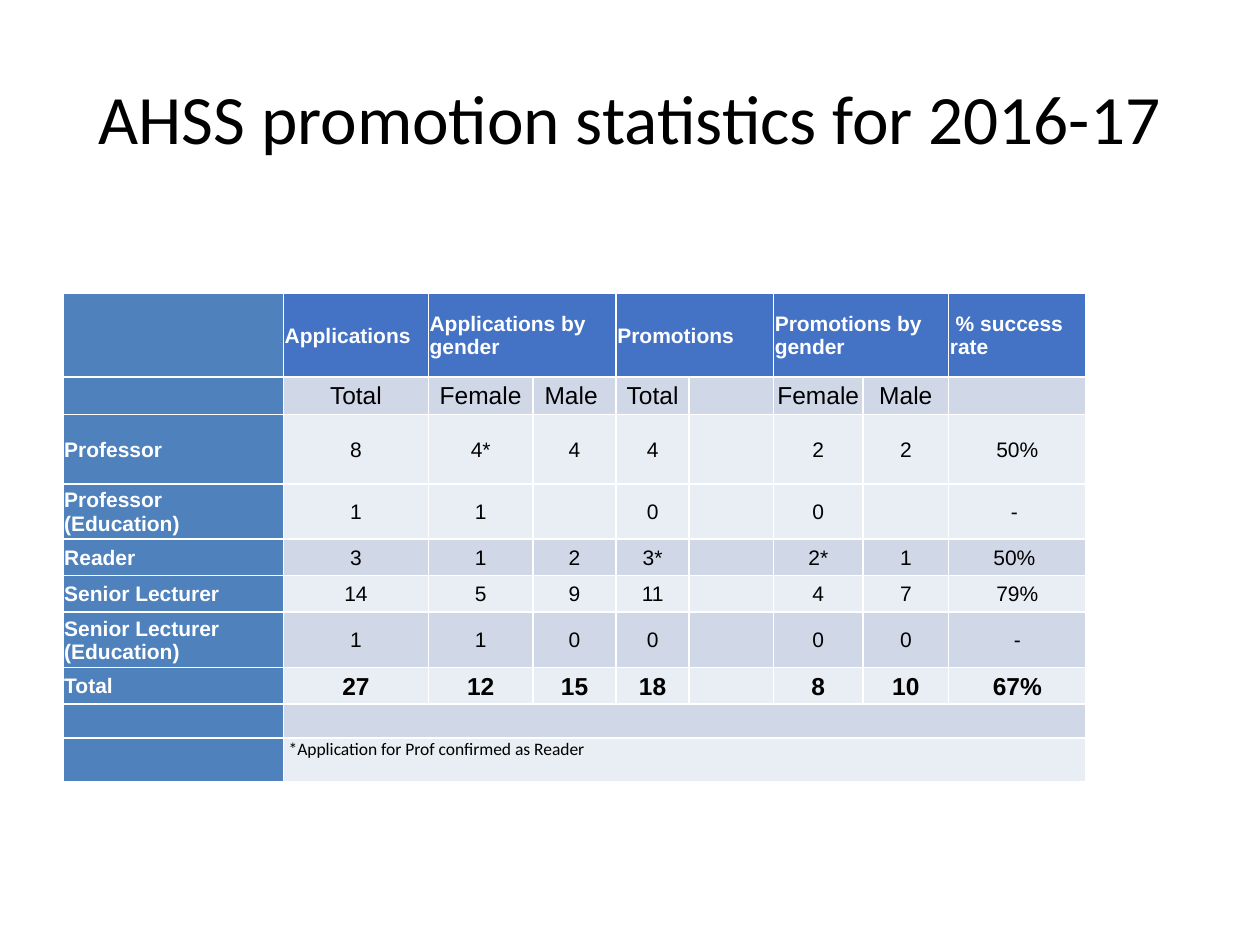
from dataclasses import dataclass

from lxml.etree import SubElement
from pptx import Presentation
from pptx.dml.color import RGBColor as RGB
from pptx.enum.text import MSO_ANCHOR as ANCHOR, PP_ALIGN as ALIGN
from pptx.oxml.ns import qn
from pptx.util import Inches, Pt


@dataclass(frozen=True)
class Theme:
    white: str = "FFFFFF"
    black: str = "000000"
    heading: str = "4472C4"
    label: str = "4F81BD"
    dark_band: str = "D0D8E8"
    light_band: str = "E9EDF4"
    title_font: str = "Calibri"
    table_font: str = "Arial"
    title_size: float = 39.6
    large_size: int = 14
    body_size: int = 12
    note_size: int = 10
    rule: float = 1
    heading_rule: float = 1.5


THEME = Theme()
TITLE = "AHSS promotion statistics for 2016-17"
HEADINGS = ["", "Applications", "Applications by gender", "", "Promotions", "",
            "Promotions by gender", "", " % success rate"]
SUBHEADINGS = ["", "Total", "Female", "Male ", "Total", "", "Female", "Male", ""]
GRADES = [
    ["Professor", "8", "4*", "4", "4", "", "2", "2", "50%"],
    ["Professor (Education)", "1", "1", "", "0", "", "0", "", "- "],
    ["Reader", "3", "1", "2", "3*", "", "2*", "1", "50% "],
    ["Senior Lecturer", "14", "5", "9", "11", "", "4", "7", "79%"],
    ["Senior Lecturer (Education)", "1", "1", "0", "0", "", "0", "0", "-"],
]
TOTALS = ["Total", "27", "12", "15", "18", "", "8", "10", "67%"]
SPACER = [""] * 9
FOOTNOTE = ["", " *Application for Prof confirmed as Reader"] + [""] * 7
ROWS = [HEADINGS, SUBHEADINGS, *GRADES, TOTALS, SPACER, FOOTNOTE]
SUBHEADING_ROW = 1
TOTAL_ROW = ROWS.index(TOTALS)
NOTE_ROW = len(ROWS) - 1
DARK_ROWS = {1, 4, 6, 8}
WIDTHS = [1.75, 1.15, 0.83, 0.66, 0.58, 0.67, 0.71, 0.68, 1.09]
HEIGHTS = [0.66, 0.3, 0.55, 0.44, 0.29, 0.29, 0.44, 0.29, 0.27, 0.35]
MERGES = [(0, 2, 3), (0, 4, 5), (0, 6, 7), (TOTAL_ROW + 1, 1, 8), (NOTE_ROW, 1, 8)]


def add_run(paragraph, text, font, size, color, bold=False):
    run = paragraph.add_run()
    run.text = text
    run.font.name = font
    run.font.size = Pt(size)
    run.font.bold = bold
    run.font.color.rgb = RGB.from_string(color)


def cell_fill(row, column):
    if column == 0:
        return THEME.label
    if row == 0:
        return THEME.heading
    return THEME.dark_band if row in DARK_ROWS else THEME.light_band


def text_size(row, column):
    if row == NOTE_ROW:
        return THEME.note_size
    if row in (SUBHEADING_ROW, TOTAL_ROW) and column > 0:
        return THEME.large_size
    return THEME.body_size


def add_borders(cell, row):
    properties = cell._tc.get_or_add_tcPr()
    heavy_side = {0: "lnB", 1: "lnT"}.get(row)
    for position, side in enumerate(("lnL", "lnR", "lnT", "lnB")):
        width = THEME.heading_rule if side == heavy_side else THEME.rule
        line = properties.makeelement(qn(f"a:{side}"), {"w": str(Pt(width))})
        fill = SubElement(line, qn("a:solidFill"))
        SubElement(fill, qn("a:srgbClr"), val=THEME.white)
        properties.insert(position, line)


def format_cell(cell, row, column, text):
    cell.fill.solid()
    cell.fill.fore_color.rgb = RGB.from_string(cell_fill(row, column))
    cell.margin_left = cell.margin_top = cell.margin_right = Inches(0.01)
    cell.margin_bottom = 0
    cell.vertical_anchor = ANCHOR.TOP if row == NOTE_ROW else ANCHOR.MIDDLE
    add_borders(cell, row)
    paragraph = cell.text_frame.paragraphs[0]
    size = text_size(row, column)
    if not text:
        SubElement(paragraph._p, qn("a:endParaRPr"), sz=str(size * 100))
        return
    on_blue = row == 0 or column == 0
    centred = not on_blue and row != NOTE_ROW
    paragraph.alignment = ALIGN.CENTER if centred else ALIGN.LEFT
    add_run(paragraph, text,
            THEME.title_font if row == NOTE_ROW else THEME.table_font, size,
            THEME.white if on_blue else THEME.black,
            on_blue or row == TOTAL_ROW)


def add_title(slide):
    title = slide.shapes.add_textbox(Inches(0.5), Inches(0.3), Inches(9), Inches(1.25))
    frame = title.text_frame
    frame.word_wrap = True
    frame.vertical_anchor = ANCHOR.MIDDLE
    paragraph = frame.paragraphs[0]
    paragraph.alignment = ALIGN.CENTER
    add_run(paragraph, TITLE, THEME.title_font, THEME.title_size, THEME.black)


def add_statistics(slide):
    statistics = slide.shapes.add_table(
        len(ROWS), len(WIDTHS), Inches(0.5), Inches(2.33),
        Inches(sum(WIDTHS)), Inches(sum(HEIGHTS))).table
    for column, width in zip(statistics.columns, WIDTHS):
        column.width = Inches(width)
    for row, height in zip(statistics.rows, HEIGHTS):
        row.height = Inches(height)
    for row, texts in enumerate(ROWS):
        for column, text in enumerate(texts):
            format_cell(statistics.cell(row, column), row, column, text)
    for row, first, last in MERGES:
        statistics.cell(row, first).merge(statistics.cell(row, last))


def main():
    presentation = Presentation()
    presentation.slide_width = Inches(10)
    presentation.slide_height = Inches(7.5)
    slide = presentation.slides.add_slide(presentation.slide_layouts[6])
    add_title(slide)
    add_statistics(slide)
    presentation.save("out.pptx")


if __name__ == "__main__":
    main()
